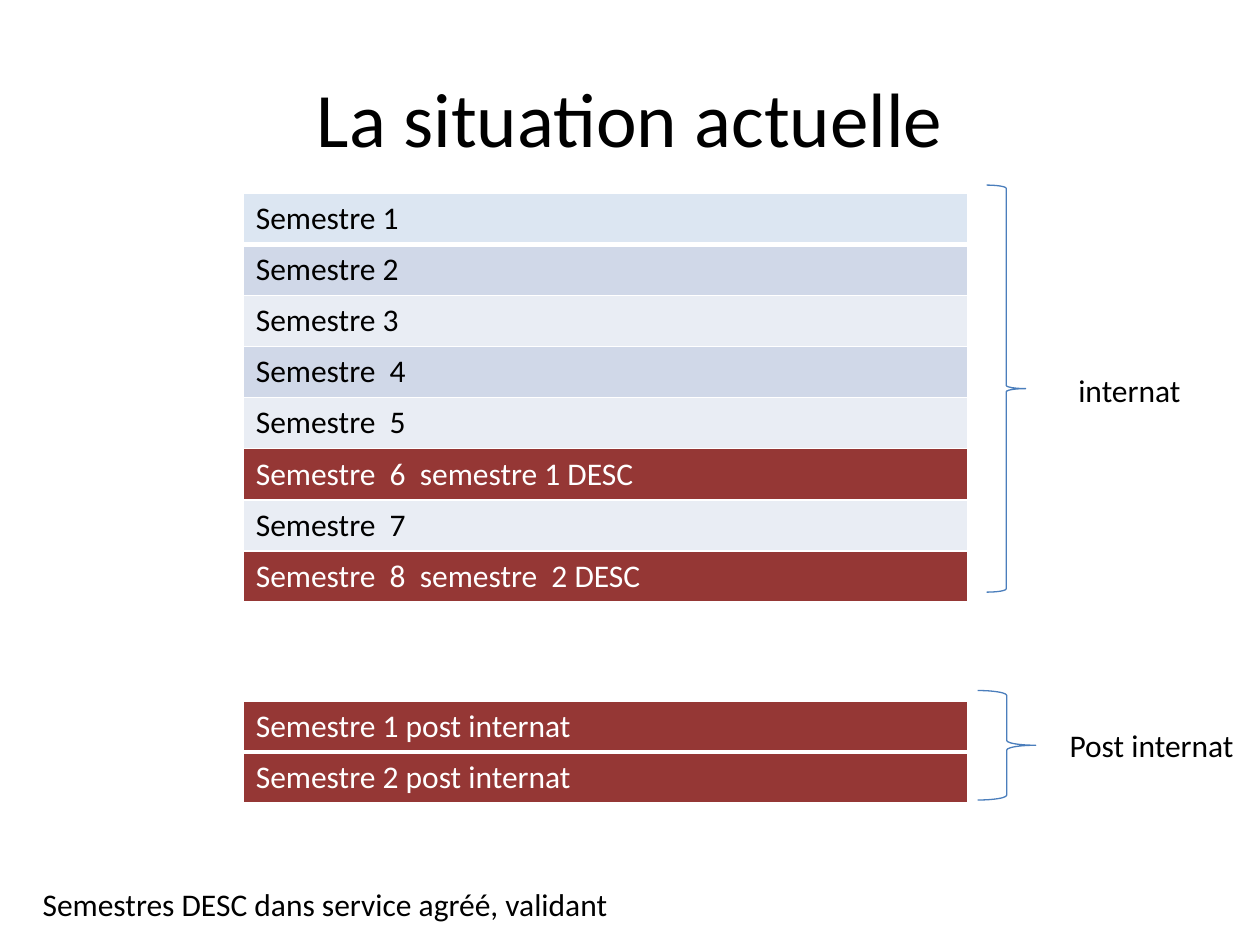
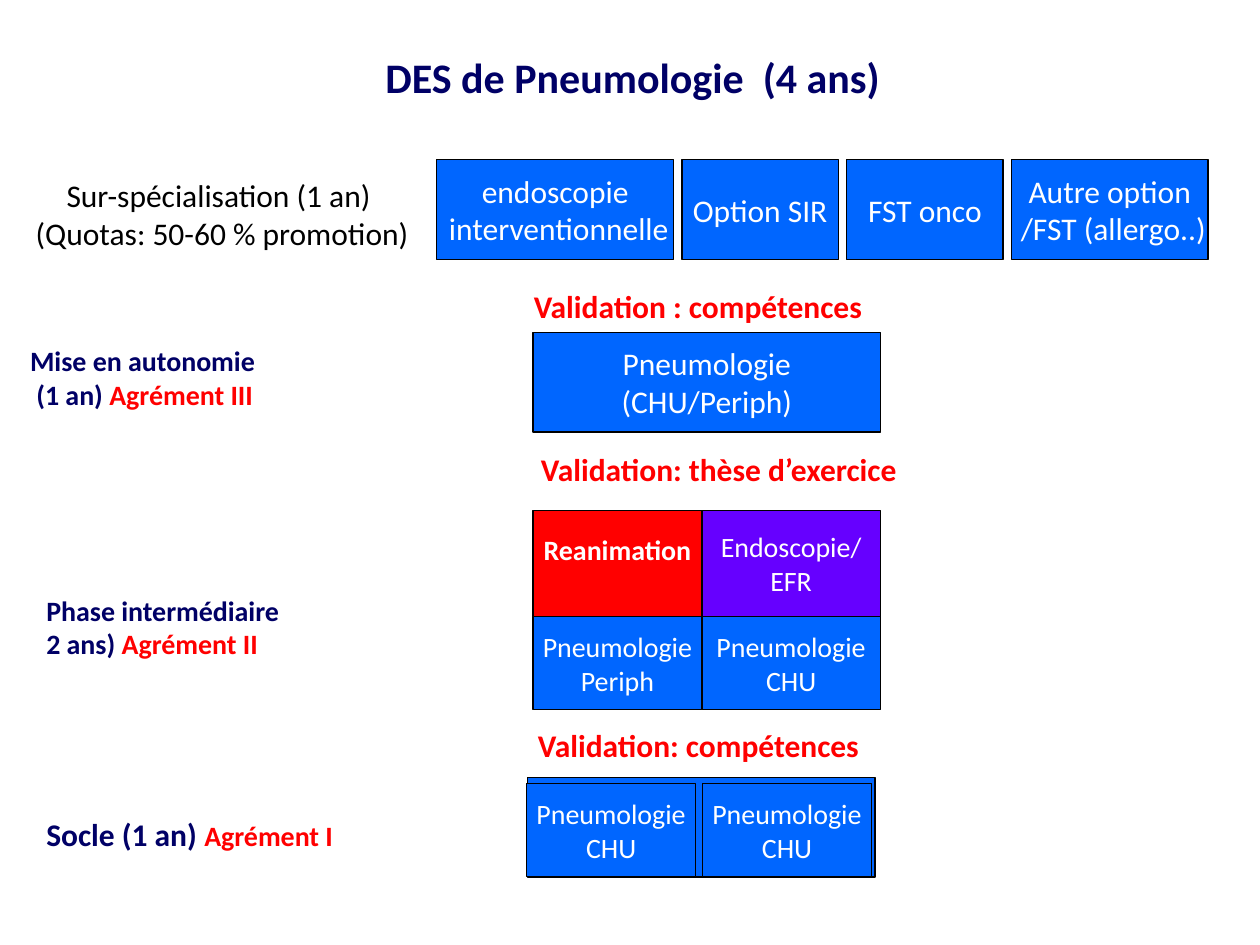
"""Build two slides on the current and the planned training in pneumology."""
from lxml import etree
from pptx import Presentation
from pptx.dml.color import RGBColor
from pptx.enum.shapes import MSO_SHAPE
from pptx.enum.text import MSO_ANCHOR, MSO_AUTO_SIZE, PP_ALIGN
from pptx.oxml.ns import qn
from pptx.util import Pt

RECT, BRACE = MSO_SHAPE.RECTANGLE, MSO_SHAPE.RIGHT_BRACE
LEFT, CENTER = PP_ALIGN.LEFT, PP_ALIGN.CENTER
TOP, MIDDLE, BOTTOM = MSO_ANCHOR.TOP, MSO_ANCHOR.MIDDLE, MSO_ANCHOR.BOTTOM
FIT = MSO_AUTO_SIZE.SHAPE_TO_FIT_TEXT

FONT = "Calibri"
BLACK = RGBColor(0x00, 0x00, 0x00)
WHITE = RGBColor(0xFF, 0xFF, 0xFF)
NAVY = RGBColor(0x00, 0x00, 0x66)
RED = RGBColor(0xFF, 0x00, 0x00)
BLUE = RGBColor(0x00, 0x66, 0xFF)
VIOLET = RGBColor(0x66, 0x00, 0xFF)
BRACE_BLUE = RGBColor(0x4B, 0x7E, 0xBC)
MAROON = RGBColor(0x95, 0x37, 0x35)
FIRST = RGBColor(0xDC, 0xE6, 0xF2)
BANDS = (RGBColor(0xE9, 0xED, 0xF4), RGBColor(0xD0, 0xD8, 0xE8))

PLAIN = {"size": Pt(18), "color": BLACK}
HEAD = {"size": Pt(44), "color": BLACK}
HEAD_BOLD = {"size": Pt(24), "color": NAVY, "bold": True}
CHECK = {"size": Pt(18), "color": RED, "bold": True}
PHASE = {"size": Pt(16), "color": NAVY, "bold": True}
PHASE_BIG = {**PHASE, "size": Pt(18)}
LICENCE = {**PHASE, "color": RED}
BOX = {"size": Pt(18), "color": WHITE}
BOX_SMALL = {"size": Pt(16), "color": WHITE}
BOX_BOLD = {**BOX_SMALL, "bold": True}

INTERNAT = [
    "Semestre 1", "Semestre 2", "Semestre 3", "Semestre  4", "Semestre  5",
    "Semestre  6  semestre 1 DESC", "Semestre  7",
    "Semestre  8  semestre  2 DESC",
]
POST_INTERNAT = ["Semestre 1 post internat", "Semestre 2 post internat"]
TABLES = [(110.4, INTERNAT), (400.6, POST_INTERNAT)]
BRACES = [(563.8, 105.8, 22.3, 232.6), (558.7, 394.6, 33.1, 62.6)]
NOTES = [
    (17.3, 502, 340, "Semestres DESC dans service agréé, validant"),
    (609.1, 208.4, 73.6, "internat"),
    (604.1, 411.4, 109.6, "Post internat"),
]

OPTIONS = [
    (135.4, ["endoscopie", " interventionnelle"]),
    (89.3, ["Option SIR"]),
    (89.3, ["FST onco"]),
    (112.3, ["Autre option", " /FST (allergo..)"]),
]
CHECKS = [
    (89.3, 160.6, 619.2, "Validation : compétences"),
    (124.6, 253.4, 572.4, "Validation: thèse d’exercice"),
    (295.9, 411.1, 206.6, "Validation: compétences"),
]
PHASES = [
    (10.1, 193, 205.2, [[("Mise en autonomie", PHASE)],
                        [(" (1 an) ", PHASE), ("Agrément III", LICENCE)]]),
    (19.4, 335.5, 208.8, [[("Phase intermédiaire", PHASE)],
                          [("2 ans) ", PHASE), ("Agrément II", LICENCE)]]),
    (19.4, 462.2, 199.4, [[("Socle (1 an) ", PHASE_BIG),
                           ("Agrément I", LICENCE)]]),
]
MIDDLE_PHASE = [
    (60.5, [(RED, ["Reanimation"]), (VIOLET, ["Endoscopie/", "EFR"])]),
    (53.3, [(BLUE, ["Pneumologie", "Periph"]), (BLUE, ["Pneumologie", "CHU"])]),
]
MIDDLE_WIDTHS = (96.5, 102)
BOX_LEFT, BOX_W, BOX_H = 304.6, 198.7, 57


def lines(texts, fmt):
    return [[(text, fmt)] for text in texts]


def fill_text(tf, paragraphs, align=LEFT):
    for i, runs in enumerate(paragraphs):
        p = tf.add_paragraph() if i else tf.paragraphs[0]
        p.alignment = align
        for text, fmt in runs:
            r = p.add_run()
            r.text = text
            r.font.name = FONT
            for key, value in fmt.items():
                if key == "color":
                    r.font.color.rgb = value
                else:
                    setattr(r.font, key, value)


def add_text(s, at, paragraphs, align=LEFT, anchor=TOP, wrap=True, fit=True):
    tf = s.shapes.add_textbox(*map(Pt, at)).text_frame
    tf.word_wrap, tf.vertical_anchor = wrap, anchor
    if fit:
        tf.auto_size = FIT
    fill_text(tf, paragraphs, align)


def add_title(s, at, text, fmt):
    add_text(s, at, lines([text], fmt), CENTER, MIDDLE, fit=False)


def add_shape(s, kind, at, line, fill=None):
    sp = s.shapes.add_shape(kind, *map(Pt, at))
    sp.shadow.inherit = False
    sp.line.color.rgb, sp.line.width = line, Pt(0.75)
    if fill is None:
        sp.fill.background()
    else:
        sp.fill.solid()
        sp.fill.fore_color.rgb = fill
    return sp


def add_box(s, at, texts=(), fmt=BOX, fill=BLUE):
    sp = add_shape(s, RECT, at, BLACK, fill)
    tf = sp.text_frame
    tf.word_wrap, tf.vertical_anchor = False, MIDDLE
    fill_text(tf, lines(texts, fmt), CENTER)
    return tf


def set_borders(cell, row):
    pr = cell._tc.get_or_add_tcPr()
    widths = {"lnL": 1, "lnR": 1, "lnT": 3 if row == 1 else 1,
              "lnB": 3 if row == 0 else 1}
    for i, (tag, width) in enumerate(widths.items()):
        ln = etree.Element(qn(f"a:{tag}"), w=str(Pt(width)))
        solid = etree.SubElement(ln, qn("a:solidFill"))
        etree.SubElement(solid, qn("a:srgbClr"), val=str(WHITE))
        pr.insert(i, ln)


def add_semesters(s, top, names):
    height = 29.2
    table = s.shapes.add_table(len(names), 1, Pt(139), Pt(top), Pt(414),
                               Pt(height * len(names))).table
    for i, name in enumerate(names):
        table.rows[i].height = Pt(height)
        cell = table.cell(i, 0)
        special = "DESC" in name or "post" in name
        cell.fill.solid()
        cell.fill.fore_color.rgb = (
            MAROON if special else BANDS[i % 2] if i else FIRST)
        set_borders(cell, i)
        fill_text(cell.text_frame, lines([name], BOX if special else PLAIN))


def build_current(s):
    add_title(s, (36, 21.6, 648, 90), "La situation actuelle", HEAD)
    for top, names in TABLES:
        add_semesters(s, top, names)
    for at in BRACES:
        add_shape(s, BRACE, at, BRACE_BLUE)
    for x, y, w, text in NOTES:
        add_text(s, (x, y, w, 29), lines([text], PLAIN), wrap=False)


def build_planned(s):
    add_title(s, (5.8, 4.3, 711.4, 78.5), "DES de Pneumologie  (4 ans)",
              HEAD_BOLD)
    add_text(s, (7.9, 97.2, 234, 51),
             lines(["Sur-spécialisation (1 an)",
                    " (Quotas: 50-60 % promotion)"], PLAIN),
             CENTER, wrap=False)
    for x, y, w, paragraphs in PHASES:
        add_text(s, (x, y, w, 29), paragraphs)
    for x, y, w, text in CHECKS:
        add_text(s, (x, y, w, 29), lines([text], CHECK), CENTER)

    x = 249.6
    for w, texts in OPTIONS:
        add_box(s, (x, 91.2, w, BOX_H), texts)
        x += w + 4.8

    add_box(s, (BOX_LEFT, 189.9, BOX_W, BOX_H),
            ["Pneumologie", "(CHU/Periph)"])

    y = 291.8
    for h, cells in MIDDLE_PHASE:
        x = BOX_LEFT
        for w, (fill, texts) in zip(MIDDLE_WIDTHS, cells):
            single = len(texts) == 1
            tf = add_box(s, (x, y, w, h), texts,
                         BOX_BOLD if single else BOX_SMALL, fill)
            if single:
                tf.vertical_anchor, tf.margin_bottom = BOTTOM, Pt(29)
            x += w
        y += h

    add_box(s, (301.4, 444.2, BOX_W, BOX_H))
    for i in range(2):
        add_box(s, (301 + 100.5 * i, 447.8, 96.5, 53.3),
                ["Pneumologie", "CHU"], BOX_SMALL)


def main():
    prs = Presentation()
    prs.slide_width, prs.slide_height = Pt(720), Pt(540)
    for build in (build_current, build_planned):
        build(prs.slides.add_slide(prs.slide_layouts[6]))
    prs.save("out.pptx")


if __name__ == "__main__":
    main()
